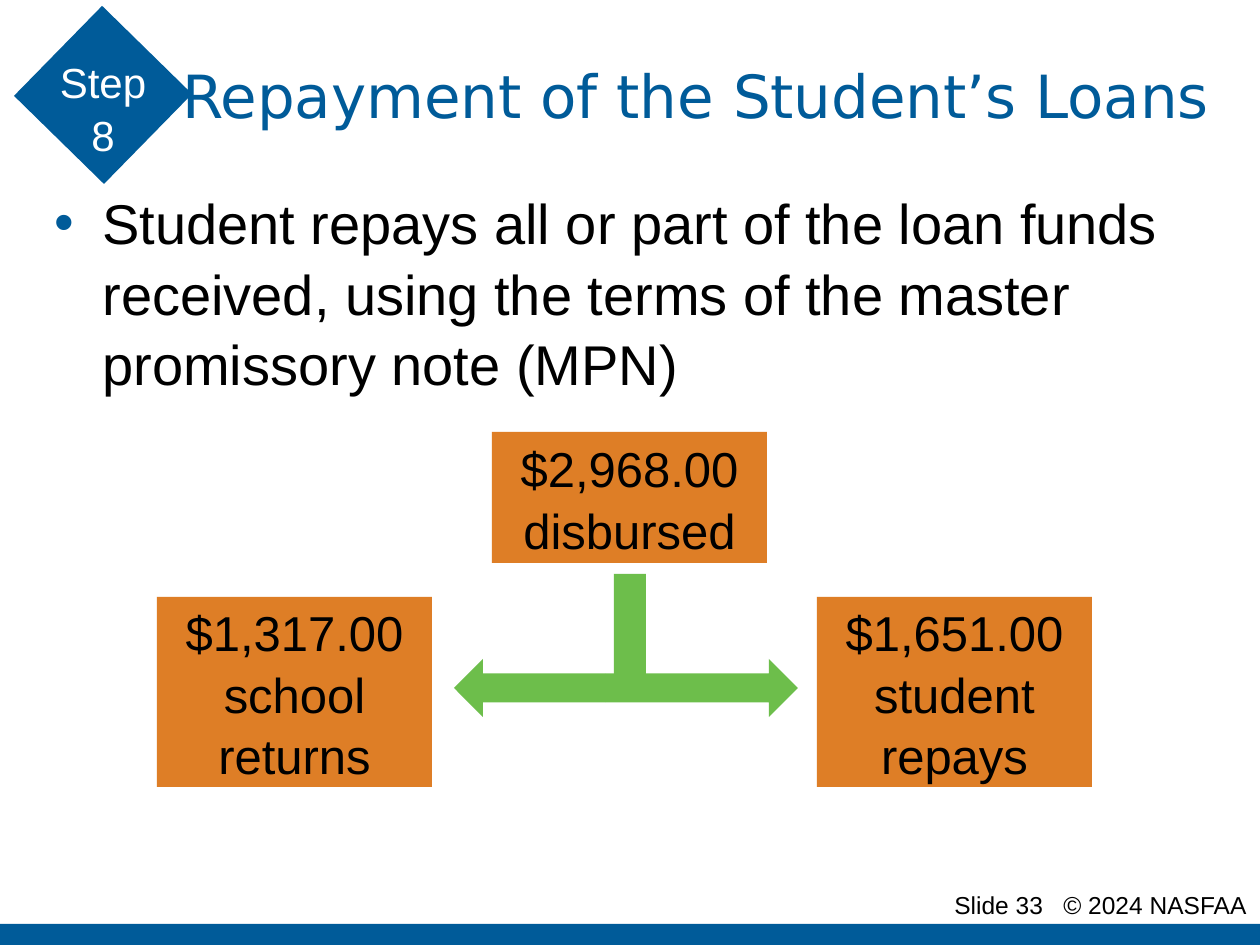
import pptx
import pptx.util
import pptx.dml.color
import pptx.enum.shapes
import pptx.enum.text
from lxml import etree

SHAPE = pptx.enum.shapes.MSO_SHAPE
ALIGN = pptx.enum.text.PP_ALIGN
MIDDLE = pptx.enum.text.MSO_ANCHOR.MIDDLE
SCALE = 914400 // 126  # EMU in one px
WIDE, HIGH = 1260, 945
COLORS = {"blue": "005B99", "orange": "DE7E26", "green": "6DBE4B",
          "black": "000000", "white": "FFFFFF"}

TITLE = "Repayment of the Student’s Loans"
STEP = "Step 8"
POINT = ("Student repays all or part of the loan funds received, "
         "using the terms of the master promissory note (MPN)")
FOOTER = "Slide 33\t© 2024 NASFAA"
BOX_WIDE = 275
BOXES = [  # left, top, height, text
    (492, 432, 131, "$2,968.00\ndisbursed"),
    (157, 597, 190, "$1,317.00 school returns"),
    (817, 597, 190, "$1,651.00 student repays"),
]
ARROWS = [  # kind, left, top, width, height
    (SHAPE.RECTANGLE, 614, 574, 32, 118),
    (SHAPE.RIGHT_ARROW, 606, 659, 192, 58),
    (SHAPE.LEFT_ARROW, 454, 659, 152, 58),
]


def px(n):
    return pptx.util.Emu(n * SCALE)


def rgb(name):
    return pptx.dml.color.RGBColor.from_string(COLORS[name])


def write(frame, text, size, color, align=ALIGN.LEFT, font="Arial", space=1.05):
    frame.word_wrap = True
    frame.text = text
    for para in frame.paragraphs:
        para.alignment = align
        para.line_spacing = space
        para.font.size = pptx.util.Pt(size)
        para.font.name = font
        para.font.color.rgb = rgb(color)


def add_solid(kind, left, top, width, height, color):
    shape = slide.shapes.add_shape(kind, *map(px, (left, top, width, height)))
    shape.shadow.inherit = False
    shape.fill.solid()
    shape.fill.fore_color.rgb = rgb(color)
    shape.line.fill.background()
    return shape


def add_text(left, top, width, height):
    return slide.shapes.add_textbox(*map(px, (left, top, width, height))).text_frame


def add_props(para, indent, *parts):
    """Set a hanging indent in px and append (tag, attributes) elements."""
    props = para._p.get_or_add_pPr()
    if indent:
        props.set("marL", str(px(indent)))
        props.set("indent", str(px(-indent)))
    for tag, attrs in parts:
        node = props
        for name in tag.split("/"):
            node = etree.SubElement(node, pptx.oxml.ns.qn(name))
        for key, value in attrs.items():
            node.set(key, value)


prs = pptx.Presentation()
prs.slide_width, prs.slide_height = px(WIDE), px(HIGH)
slide = prs.slides.add_slide(prs.slide_layouts[5])

title = slide.shapes.title
title.left, title.top, title.width, title.height = map(px, (182, 21, 1078, 147))
title.text_frame.margin_left = 0
title.text_frame.vertical_anchor = MIDDLE
write(title.text_frame, TITLE, 34, "blue", font="DejaVu Sans", space=1)

add_solid(SHAPE.RECTANGLE, 0, 924, WIDE, HIGH - 924, "blue")
foot = add_text(942, 882, WIDE - 942, 32)
write(foot, FOOTER, 14, "black")
add_props(foot.paragraphs[0], 0,
          ("a:tabLst/a:tab", {"pos": str(px(109)), "algn": "l"}))

body = add_text(42, 179, 1172, 220)
write(body, POINT, 32, "black")
add_props(body.paragraphs[0], 48,
          ("a:buClr/a:srgbClr", {"val": COLORS["blue"]}),
          ("a:buFont", {"typeface": "Arial"}),
          ("a:buChar", {"char": "•"}))
# The run properties must stay behind the bullet elements.
props = body.paragraphs[0]._p.pPr
props.append(props.find(pptx.oxml.ns.qn("a:defRPr")))
props = foot.paragraphs[0]._p.pPr
props.append(props.find(pptx.oxml.ns.qn("a:defRPr")))

for left, top, height, text in BOXES:
    box = add_solid(SHAPE.RECTANGLE, left, top, BOX_WIDE, height, "orange")
    box.text_frame.vertical_anchor = MIDDLE
    write(box.text_frame, text, 28, "black", ALIGN.CENTER)

for arrow in ARROWS:
    add_solid(*arrow, "green")

badge = add_solid(SHAPE.RECTANGLE, 40, 32, 126, 126, "blue")
badge.rotation = 44.4
write(add_text(37, 48, 132, 115), STEP, 24, "white", ALIGN.CENTER)

prs.save("out.pptx")
